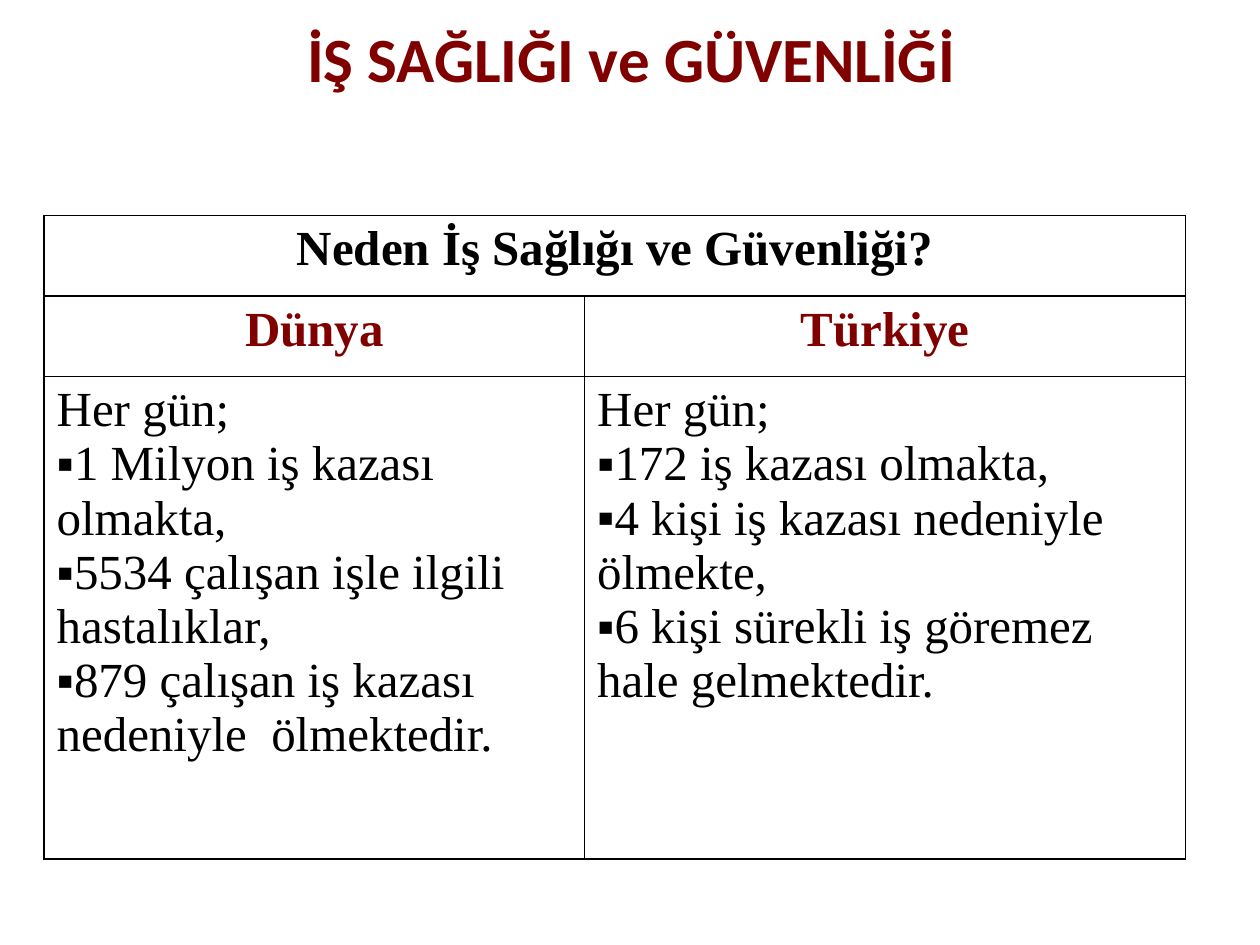
"""Build the occupational health and safety slide with its comparison table."""
from lxml import etree
from pptx import Presentation
from pptx.dml.color import RGBColor
from pptx.enum import text
from pptx.oxml import ns
from pptx.util import Inches, Pt

COLORS = {"accent": "800000", "ink": "000000", "paper": "FFFFFF"}
TABLE_FONT = "Times New Roman"
HEADING = "Neden İş Sağlığı ve Güvenliği?"
COLUMNS = [
    ("Dünya", 4.29, [
        "Her gün;",
        "1 Milyon iş kazası olmakta,",
        "5534 çalışan işle ilgili hastalıklar,",
        "879 çalışan iş kazası nedeniyle  ölmektedir.",
    ]),
    ("Türkiye", 4.77, [
        "Her gün;",
        "172 iş kazası olmakta,",
        "4 kişi iş kazası nedeniyle ölmekte,",
        "6 kişi sürekli iş göremez hale gelmektedir.",
    ]),
]
ROW_HEIGHTS = [0.64, 0.64, 3.83]


def format_paragraph(para, font, size, color, bold, align):
    para.alignment = align
    for span in para.runs:
        span.font.name = font
        span.font.size = Pt(size)
        span.font.bold = bold
        span.font.color.rgb = RGBColor.from_string(COLORS[color])


def add_borders(cell):
    properties = cell._tc.get_or_add_tcPr()
    for position, side in enumerate(("lnL", "lnR", "lnT", "lnB")):
        line = etree.Element(ns.qn(f"a:{side}"), w=str(Pt(1)))
        fill = etree.SubElement(line, ns.qn("a:solidFill"))
        etree.SubElement(fill, ns.qn("a:srgbClr"), val=COLORS["ink"])
        properties.insert(position, line)


deck = Presentation()
deck.slide_width, deck.slide_height = Inches(10), Inches(7.5)
page = deck.slides.add_slide(deck.slide_layouts[5])

title = page.shapes.title
title.left, title.top = Inches(0.51), Inches(0)
title.width, title.height = Inches(9), Inches(0.91)
title.text_frame.text = "İŞ SAĞLIĞI ve GÜVENLİĞİ"
title.text_frame.vertical_anchor = text.MSO_ANCHOR.MIDDLE
format_paragraph(title.text_frame.paragraphs[0], "Calibri", 36, "accent", True,
                 text.PP_ALIGN.CENTER)

table = page.shapes.add_table(
    3, 2, Inches(0.35), Inches(1.71), Inches(9.06), Inches(sum(ROW_HEIGHTS))
).table
table.first_row = table.horz_banding = False
for row, height in zip(table.rows, ROW_HEIGHTS):
    row.height = Inches(height)

table.cell(0, 0).merge(table.cell(0, 1))
table.cell(0, 0).text_frame.text = HEADING
for index, (name, width, lines) in enumerate(COLUMNS):
    table.columns[index].width = Inches(width)
    table.cell(1, index).text_frame.text = name
    table.cell(2, index).text_frame.text = "\n".join(lines)

for row_index, color in enumerate(("ink", "accent", "ink")):
    is_header = row_index < 2
    align = text.PP_ALIGN.CENTER if is_header else text.PP_ALIGN.LEFT
    for cell in table.rows[row_index].cells:
        cell.fill.solid()
        cell.fill.fore_color.rgb = RGBColor.from_string(COLORS["paper"])
        add_borders(cell)
        for number, para in enumerate(cell.text_frame.paragraphs):
            format_paragraph(para, TABLE_FONT, 28, color, is_header, align)
            if number > 0:
                properties = para._p.get_or_add_pPr()
                properties.set("marL", "0")
                properties.set("indent", "0")
                etree.SubElement(properties, ns.qn("a:buFont"), typeface=TABLE_FONT)
                etree.SubElement(properties, ns.qn("a:buChar"), char="▪")

deck.save("out.pptx")
